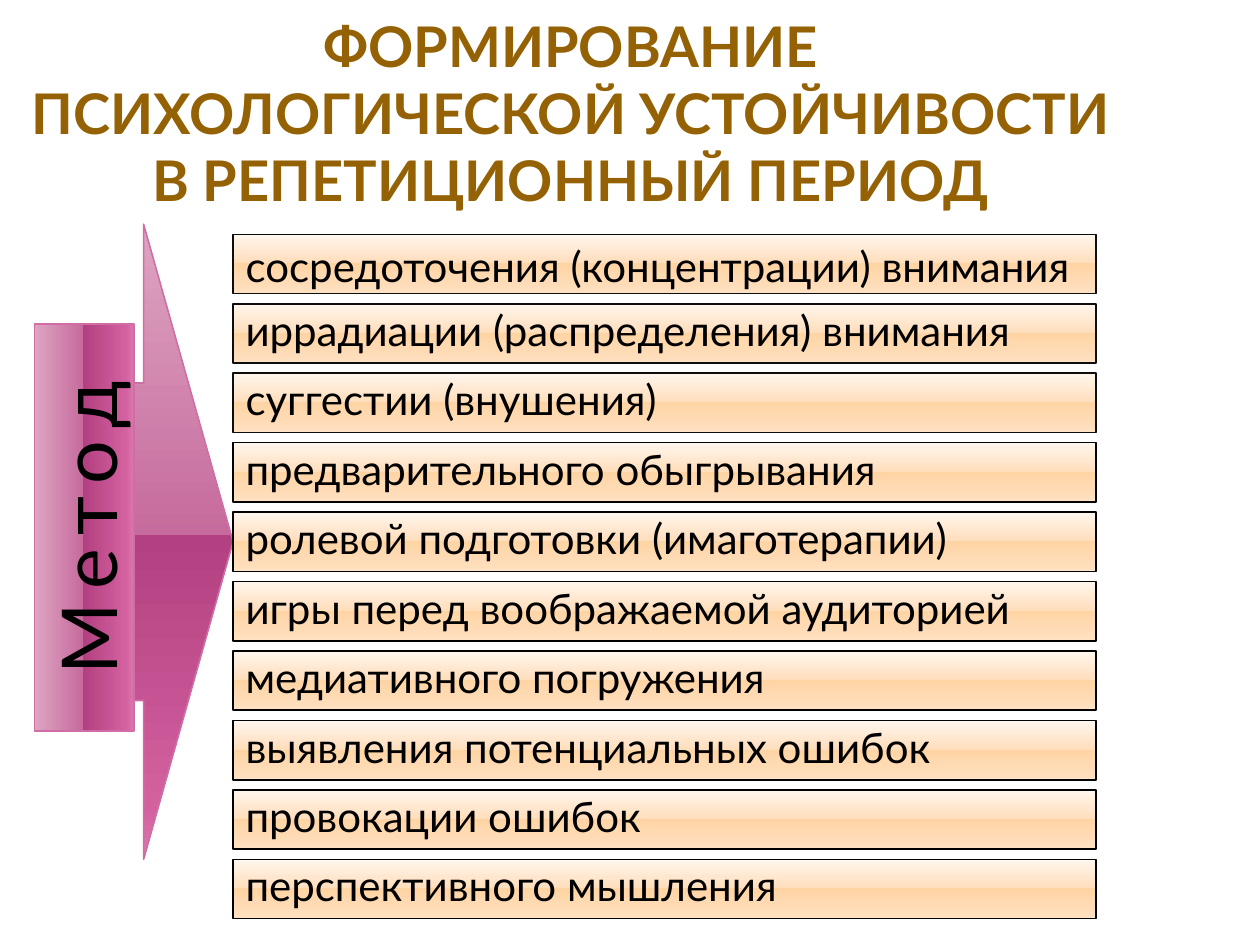
"""Builds the slide on methods of forming psychological stability in rehearsal."""
from dataclasses import dataclass

from lxml.etree import SubElement
from pptx import Presentation
from pptx.dml.color import RGBColor
from pptx.enum.shapes import MSO_SHAPE as Preset
from pptx.enum.text import MSO_ANCHOR as Anchor, MSO_AUTO_SIZE as AutoSize, PP_ALIGN as Align
from pptx.oxml.ns import qn
from pptx.util import Inches, Pt

WIDTH, HEIGHT = Inches(10), Inches(7.5)
FONT = "Lato"
PEACH = ((0, "FFF6ED"), (49, "FFDEBC"), (49, "FFD4A4"), (92, "FFDEBC"), (100, "FFE3C7"))
PINK = ((0, "DDA4C1"), (49, "C66B9D"), (49, "B34181"), (92, "D361A0"), (100, "DC79AE"))
TITLE = "ФОРМИРОВАНИЕ ПСИХОЛОГИЧЕСКОЙ УСТОЙЧИВОСТИ В РЕПЕТИЦИОННЫЙ ПЕРИОД"
METHODS = (
    "сосредоточения (концентрации) внимания",
    "иррадиации (распределения) внимания",
    "суггестии (внушения)",
    "предварительного обыгрывания",
    "ролевой подготовки (имаготерапии)",
    "игры перед воображаемой аудиторией",
    "медиативного погружения",
    "выявления потенциальных ошибок",
    "провокации ошибок",
    "перспективного мышления",
)


@dataclass(frozen=True)
class Area:
    """A place given in percent of the slide's width and height."""
    left: float
    top: float
    width: float
    height: float

    def emu(self) -> tuple[int, int, int, int]:
        return (round(WIDTH * self.left / 100), round(HEIGHT * self.top / 100),
                round(WIDTH * self.width / 100), round(HEIGHT * self.height / 100))

    def below(self, rows: int, pitch: float) -> "Area":
        return Area(self.left, self.top + rows * pitch, self.width, self.height)


@dataclass(frozen=True)
class Lettering:
    """The look of one line of text."""
    size: float
    color: str = "000000"
    align: Align = Align.LEFT
    anchor: Anchor = Anchor.TOP
    bold: bool = False
    line_spacing: float = 1.0
    tracking: int = 0
    hanging: float = 0.3


TITLE_AREA = Area(2, 5.87, 86.6, 16.67)
ARROW_AREA = Area(4.3, 23.73, 14.2, 67.2)
LABEL_AREA = Area(-9.45, 50.53, 32.3, 10.53)
FIRST_ROW = Area(18.5, 24.8, 68.5, 6.27)
ROW_PITCH = 7.35


def rgb(color: str) -> RGBColor:
    return RGBColor.from_string(color)


def place(shape, area: Area) -> None:
    shape.left, shape.top, shape.width, shape.height = area.emu()


def paint(shape, stops: tuple, outline: str) -> None:
    """Gives a shape a top-to-bottom gradient and a thin outline."""
    shape.shadow.inherit = False
    shape.fill.gradient()
    shape.fill.gradient_angle = 270
    stop_list = shape.fill._fill._gradFill.find(qn("a:gsLst"))
    for stop in list(stop_list):
        stop_list.remove(stop)
    for position, color in stops:
        stop = SubElement(stop_list, qn("a:gs"), pos=str(position * 1000))
        SubElement(stop, qn("a:srgbClr"), val=color)
    shape.line.color.rgb = rgb(outline)
    shape.line.width = Pt(0.9)


def write(shape, wording: str, look: Lettering) -> None:
    """Sets and formats the single paragraph of a shape."""
    frame = shape.text_frame
    frame.text = wording
    frame.word_wrap = True
    frame.auto_size = AutoSize.NONE
    frame.vertical_anchor = look.anchor
    line = frame.paragraphs[0]
    properties = line._p.get_or_add_pPr()
    properties.set("marL", str(Inches(look.hanging)))
    properties.set("indent", str(-Inches(look.hanging)))
    SubElement(properties, qn("a:buNone"))
    line.alignment = look.align
    line.line_spacing = look.line_spacing
    line.space_before = Pt(0)
    run = line.runs[0]
    run.font.name = FONT
    run.font.size = Pt(look.size)
    run.font.bold = look.bold
    run.font.color.rgb = rgb(look.color)
    if look.tracking:
        run._r.get_or_add_rPr().set("spc", str(look.tracking * 100))


def add_title(slide) -> None:
    title = slide.shapes.title
    place(title, TITLE_AREA)
    frame = title.text_frame
    frame.margin_left = frame.margin_right = 0
    frame.margin_top = frame.margin_bottom = 0
    write(title, TITLE, Lettering(32, "946204", Align.CENTER, Anchor.BOTTOM, bold=True, hanging=0))


def add_arrow_and_label(slide) -> None:
    arrow = slide.shapes.add_shape(Preset.RIGHT_ARROW, *ARROW_AREA.emu())
    paint(arrow, PINK, "CF6DA4")
    label = slide.shapes.add_shape(Preset.RECTANGLE, *LABEL_AREA.emu())
    label.rotation = 270
    paint(label, PINK, "CF6DA4")
    write(label, "Метод", Lettering(44, align=Align.CENTER, tracking=8))


def add_methods(slide) -> None:
    """Stacks the method bars, the first of them in the body placeholder."""
    for row, method in enumerate(METHODS):
        area = FIRST_ROW.below(row, ROW_PITCH)
        if row == 0:
            bar = slide.placeholders[1]
            place(bar, area)
        else:
            bar = slide.shapes.add_shape(Preset.RECTANGLE, *area.emu())
        paint(bar, PEACH, "0D0D0D" if row < 3 else "000000")
        write(bar, method, Lettering(24, line_spacing=0.9 if row else 1.0))


def main() -> None:
    deck = Presentation()
    deck.slide_width, deck.slide_height = WIDTH, HEIGHT
    slide = deck.slides.add_slide(deck.slide_layouts[1])
    add_title(slide)
    add_arrow_and_label(slide)
    add_methods(slide)
    deck.save("out.pptx")


if __name__ == "__main__":
    main()
